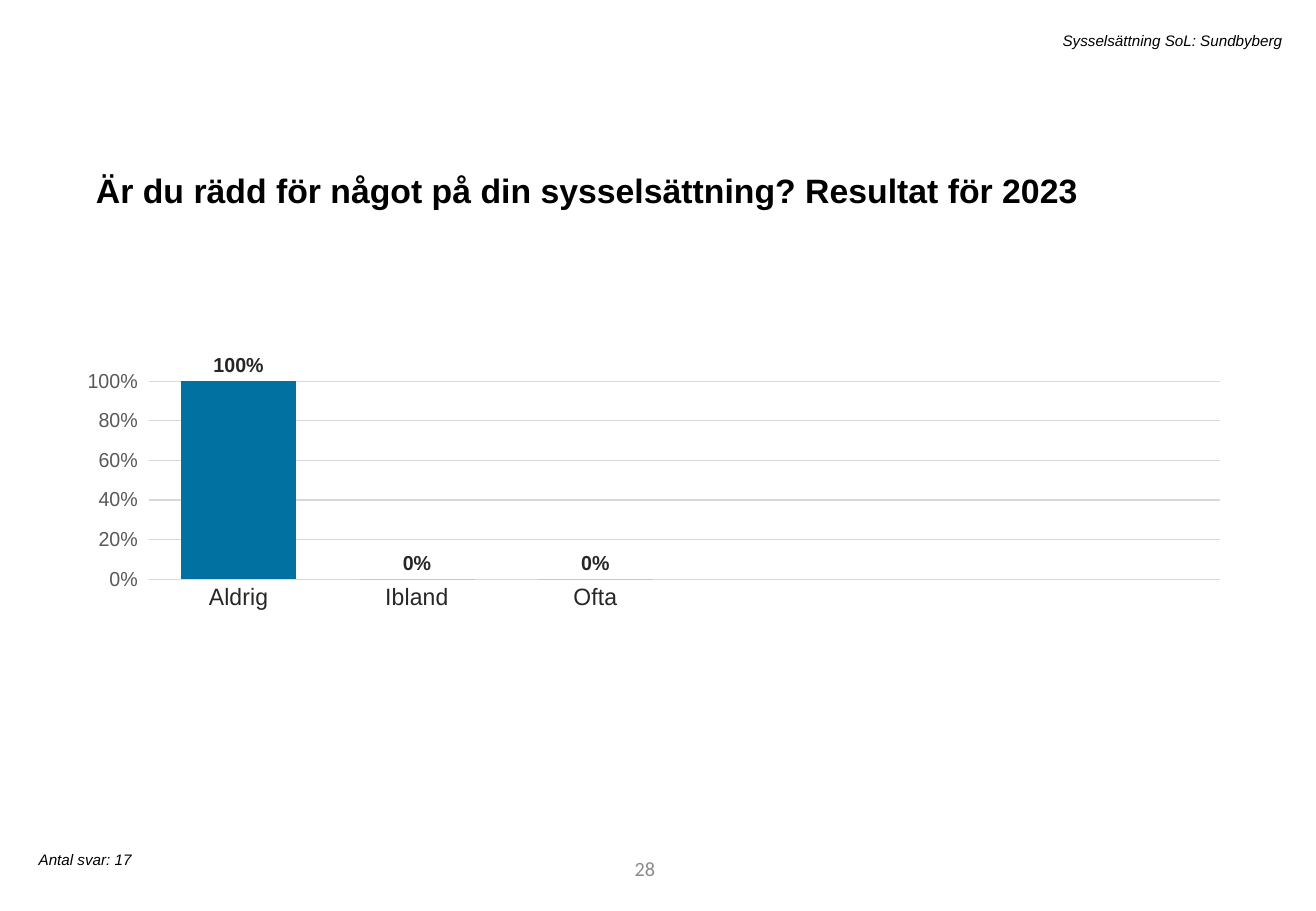
from dataclasses import dataclass

from lxml.etree import SubElement
from pptx import Presentation
from pptx.chart.data import CategoryChartData
from pptx.dml.color import RGBColor
from pptx.enum.chart import XL_CHART_TYPE as ChartType
from pptx.enum.chart import XL_LABEL_POSITION as LabelPosition
from pptx.enum.chart import XL_TICK_MARK as TickMark
from pptx.enum.text import MSO_ANCHOR as Anchor
from pptx.enum.text import MSO_AUTO_SIZE as AutoSize
from pptx.enum.text import PP_ALIGN as Align
from pptx.oxml.ns import qn
from pptx.util import Inches, Pt


@dataclass(frozen=True)
class Theme:
    font: str = "Arial"
    number_font: str = "Calibri"
    black: str = "000000"
    dark: str = "262626"
    axis: str = "595959"
    muted: str = "8C8C8C"
    grid: str = "D9D9D9"
    bar: str = "0071A1"
    title_size: int = 20
    category_size: int = 14
    label_size: int = 12
    chart_size: int = 10
    note_size: int = 9


THEME = Theme()
SLIDE_WIDTH, SLIDE_HEIGHT = Inches(10.83), Inches(7.5)
ANSWERS = {"Aldrig": 1, "Ibland": 0, "Ofta": 0}
EMPTY_SLOTS = 3


def area(left, top, width, height):
    """Turn percentages of the slide into lengths."""
    return (int(SLIDE_WIDTH * left / 100), int(SLIDE_HEIGHT * top / 100),
            int(SLIDE_WIDTH * width / 100), int(SLIDE_HEIGHT * height / 100))


def style_font(font, size, color, name=THEME.font, bold=False, italic=False):
    font.name, font.size = name, Pt(size)
    font.bold, font.italic = bold, italic
    font.color.rgb = RGBColor.from_string(color)


def style_line(line, color):
    line.width = Pt(0.75)
    line.color.rgb = RGBColor.from_string(color)


def write_text(shape, text, size, color, align=Align.LEFT, anchor=Anchor.TOP,
               **font_options):
    frame = shape.text_frame
    frame.text = text
    frame.word_wrap = True
    frame.auto_size = AutoSize.NONE
    frame.vertical_anchor = anchor
    paragraph = frame.paragraphs[0]
    paragraph.alignment = align
    style_font(paragraph.runs[0].font, size, color, **font_options)
    return paragraph


def set_title(slide, text, box):
    title = slide.shapes.title
    title.left, title.top, title.width, title.height = box
    paragraph = write_text(title, text, THEME.title_size, THEME.black, bold=True)
    paragraph.line_spacing = 1.2
    paragraph.space_before = Pt(10)


def add_note(slide, text, box, align=Align.LEFT):
    write_text(slide.shapes.add_textbox(*box), text, THEME.note_size,
               THEME.black, align, italic=True)


def add_page_number(slide, number, box):
    write_text(slide.shapes.add_textbox(*box), str(number), THEME.label_size,
               THEME.muted, Align.RIGHT, Anchor.MIDDLE, name=THEME.number_font)


def place_plot(chart, **percentages):
    """Fix the inner plot area as percentages of the chart."""
    plot_area = chart._chartSpace.chart.plotArea
    for old_layout in plot_area.findall(qn("c:layout")):
        plot_area.remove(old_layout)
    layout = SubElement(plot_area, qn("c:layout"))
    plot_area.insert(0, layout)
    manual = SubElement(layout, qn("c:manualLayout"))
    settings = {"layoutTarget": "inner", "xMode": "edge", "yMode": "edge"}
    settings.update({key: str(value / 100) for key, value in percentages.items()})
    for tag, value in settings.items():
        SubElement(manual, qn(f"c:{tag}")).set("val", value)


def style_axes(chart):
    categories = chart.category_axis
    categories.major_tick_mark = TickMark.NONE
    categories.has_major_gridlines = False
    style_font(categories.tick_labels.font, THEME.category_size, THEME.dark)
    style_line(categories.format.line, THEME.grid)

    values = chart.value_axis
    values.minimum_scale, values.maximum_scale, values.major_unit = 0, 1, 0.2
    values.major_tick_mark = TickMark.OUTSIDE
    values.tick_labels.number_format = "0%"
    values.tick_labels.number_format_is_linked = False
    style_font(values.tick_labels.font, THEME.label_size, THEME.axis)
    values.format.line.fill.background()
    style_line(values.major_gridlines.format.line, THEME.grid)


def add_answer_chart(slide, box):
    data = CategoryChartData(number_format="0%")
    data.categories = [*ANSWERS, *[""] * EMPTY_SLOTS]
    data.add_series("Series 1", [*ANSWERS.values(), *[None] * EMPTY_SLOTS])
    chart = slide.shapes.add_chart(ChartType.COLUMN_CLUSTERED, *box, data).chart
    chart.has_title = chart.has_legend = False
    style_font(chart.font, THEME.chart_size, THEME.black)
    style_axes(chart)

    # Bars and their labels
    plot = chart.plots[0]
    plot.gap_width = 55
    plot.vary_by_categories = False
    series = plot.series[0]
    series.format.fill.solid()
    series.format.fill.fore_color.rgb = RGBColor.from_string(THEME.bar)
    labels = series.data_labels
    labels.show_value = True
    labels.position = LabelPosition.OUTSIDE_END
    labels.number_format = "0%"
    labels.number_format_is_linked = False
    style_font(labels.font, THEME.label_size, THEME.dark, bold=True)

    place_plot(chart, x=2.5, y=15.4, w=96.6, h=41.3)


def main():
    presentation = Presentation()
    presentation.slide_width = SLIDE_WIDTH
    presentation.slide_height = SLIDE_HEIGHT
    title_only = presentation.slide_layouts[5]
    slide = presentation.slides.add_slide(title_only)

    # Heading
    add_note(slide, "Sysselsättning SoL: Sundbyberg",
             area(16.53, 2.8, 81.81, 3.33), Align.RIGHT)
    set_title(slide, "Är du rädd för något på din sysselsättning? Resultat för 2023",
              area(6.37, 17.07, 86.8, 6.27))

    # Answers
    add_answer_chart(slide, area(6.65, 33.73, 86.8, 52.67))

    # Footer
    add_note(slide, "Antal svar: 17", area(2.03, 92.67, 26.22, 3.33))
    add_page_number(slide, 28, area(28.16, 92.67, 22.53, 5.33))

    presentation.save("out.pptx")


if __name__ == "__main__":
    main()
